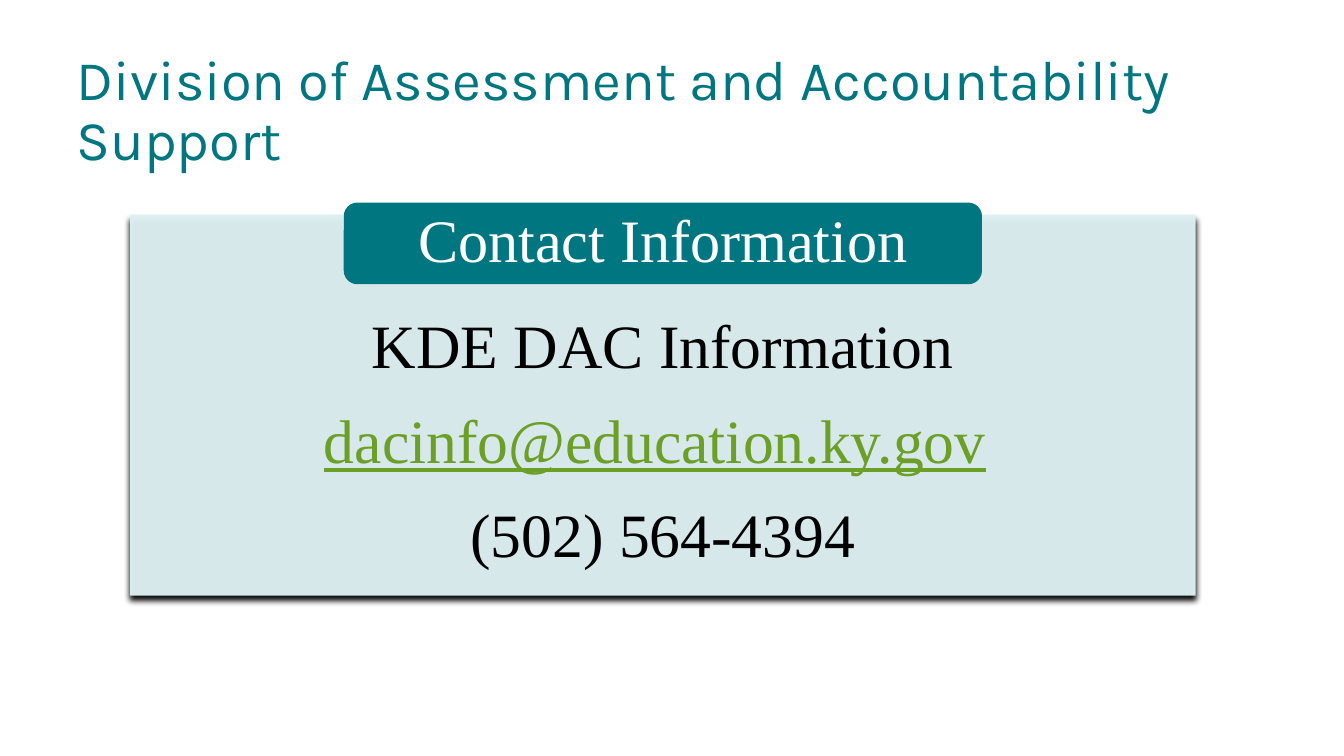
from lxml.etree import SubElement
from pptx import Presentation
from pptx.dml.color import RGBColor
from pptx.enum.shapes import MSO_SHAPE
from pptx.enum.text import MSO_ANCHOR, PP_ALIGN
from pptx.oxml.ns import qn
from pptx.util import Inches, Pt

TITLE = "Division of Assessment and Accountability Support"
HEADING = "Contact Information"
EMAIL = "dacinfo@education.ky.gov"
CONTACT_LINES = ["KDE DAC Information", EMAIL, "(502) 564-4394"]

TEAL = RGBColor(0x00, 0x77, 0x80)
PALE_TEAL = RGBColor(0xDE, 0xF0, 0xF2)
GREEN = RGBColor(0x6B, 0x9F, 0x25)
BLACK = RGBColor(0, 0, 0)
WHITE = RGBColor(255, 255, 255)

SLIDE_WIDTH, SLIDE_HEIGHT = 13.33, 7.5
PANEL_WIDTH, HEADING_WIDTH = 10.57, 6.33
PANEL_CENTER = 6.575


def set_frame(shape, insets, anchor):
    frame = shape.text_frame
    frame.word_wrap = True
    frame.vertical_anchor = anchor
    frame.margin_left, frame.margin_top, frame.margin_right, frame.margin_bottom = map(Inches, insets)
    return frame


def style(paragraph, font_name, size, color, alignment):
    paragraph.alignment = alignment
    paragraph.line_spacing = 0.9
    paragraph.font.name = font_name
    paragraph.font.size = Pt(size)
    paragraph.font.color.rgb = color


def add_box(slide, kind, top, width, height, color):
    shape = slide.shapes.add_shape(
        kind, Inches(PANEL_CENTER - width / 2), Inches(top), Inches(width), Inches(height))
    shape.shadow.inherit = False
    shape.fill.solid()
    shape.fill.fore_color.rgb = color
    shape.line.fill.background()
    return shape


def add_panel_effects(shape):
    properties = shape.element.spPr
    fill_color = properties.find(qn("a:solidFill")).find(qn("a:srgbClr"))
    SubElement(fill_color, qn("a:alpha"), val="97000")
    effects = properties.find(qn("a:effectLst"))
    shadow = SubElement(effects, qn("a:outerShdw"), blurRad=str(Pt(4)), dist=str(Pt(4)),
                        dir="5400000", rotWithShape="0")
    SubElement(shadow, qn("a:srgbClr"), val=str(BLACK))


def main():
    presentation = Presentation()
    presentation.slide_width = Inches(SLIDE_WIDTH)
    presentation.slide_height = Inches(SLIDE_HEIGHT)
    slide = presentation.slides.add_slide(presentation.slide_layouts[6])

    title = slide.shapes.add_textbox(Inches(0.41), Inches(0.39), Inches(12.51), Inches(1.45))
    frame = set_frame(title, (0.35, 0.05, 0.1, 0.05), MSO_ANCHOR.MIDDLE)
    frame.text = TITLE
    style(frame.paragraphs[0], "Karla", 40, TEAL, PP_ALIGN.LEFT)

    panel = add_box(slide, MSO_SHAPE.RECTANGLE, 2.13, PANEL_WIDTH, 3.78, PALE_TEAL)
    add_panel_effects(panel)
    frame = set_frame(panel, (0.82, 1, 0.82, 0.34), MSO_ANCHOR.TOP)
    for index, line in enumerate(CONTACT_LINES):
        paragraph = frame.add_paragraph() if index else frame.paragraphs[0]
        run = paragraph.add_run()
        run.text = line
        style(paragraph, "Times New Roman", 44, BLACK, PP_ALIGN.CENTER)
        paragraph.space_before = Pt(12 if index else 0)
        paragraph.space_after = Pt(8)
        if line == EMAIL:
            run.font.color.rgb = GREEN
            run.font.underline = True
            paragraph.add_run().text = " "

    heading = add_box(slide, MSO_SHAPE.ROUNDED_RECTANGLE, 2.01, HEADING_WIDTH, 0.81, TEAL)
    frame = set_frame(heading, (0.32, 0, 0.32, 0), MSO_ANCHOR.MIDDLE)
    frame.text = HEADING
    style(frame.paragraphs[0], "Times New Roman", 43, WHITE, PP_ALIGN.CENTER)

    presentation.save("out.pptx")


if __name__ == "__main__":
    main()
